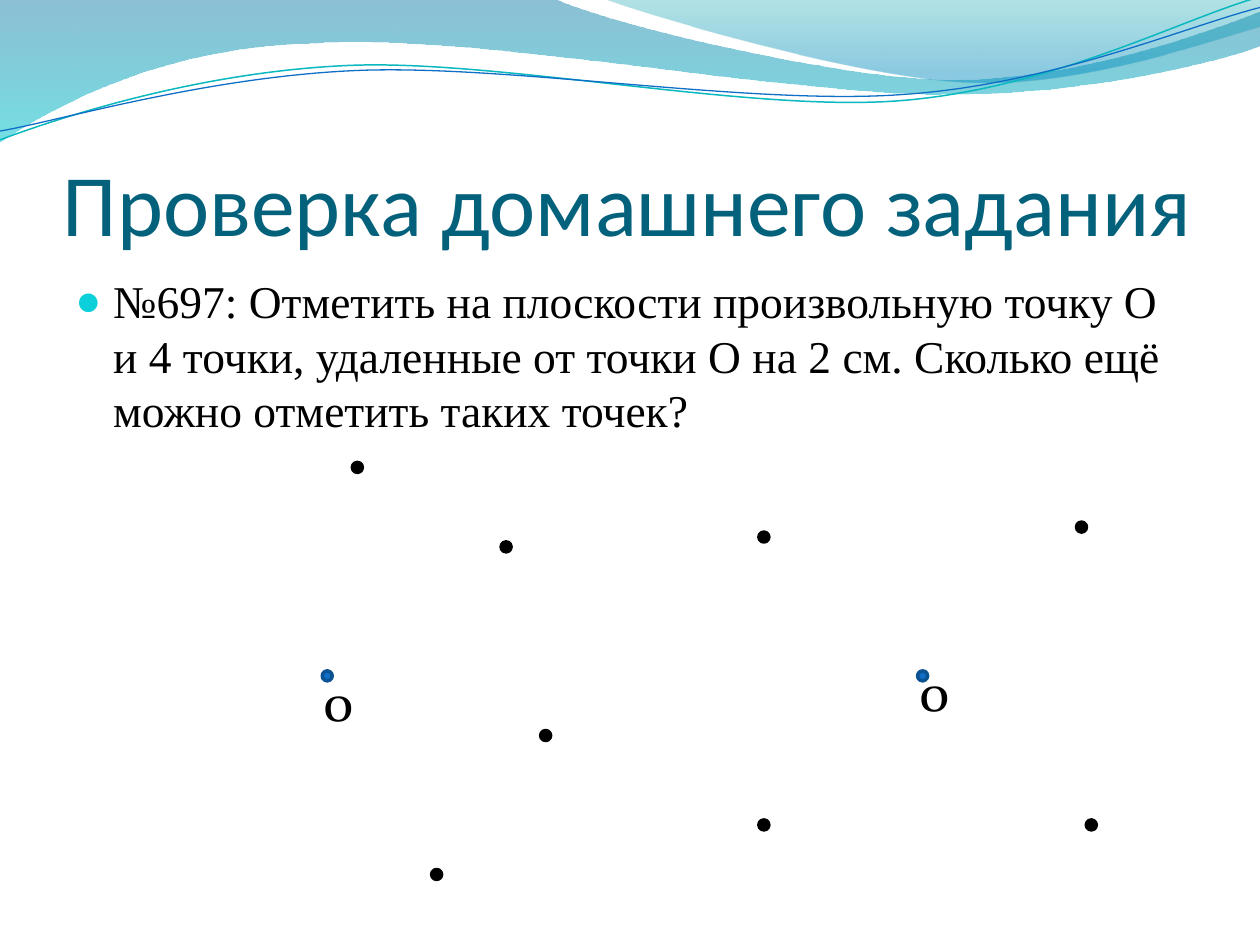
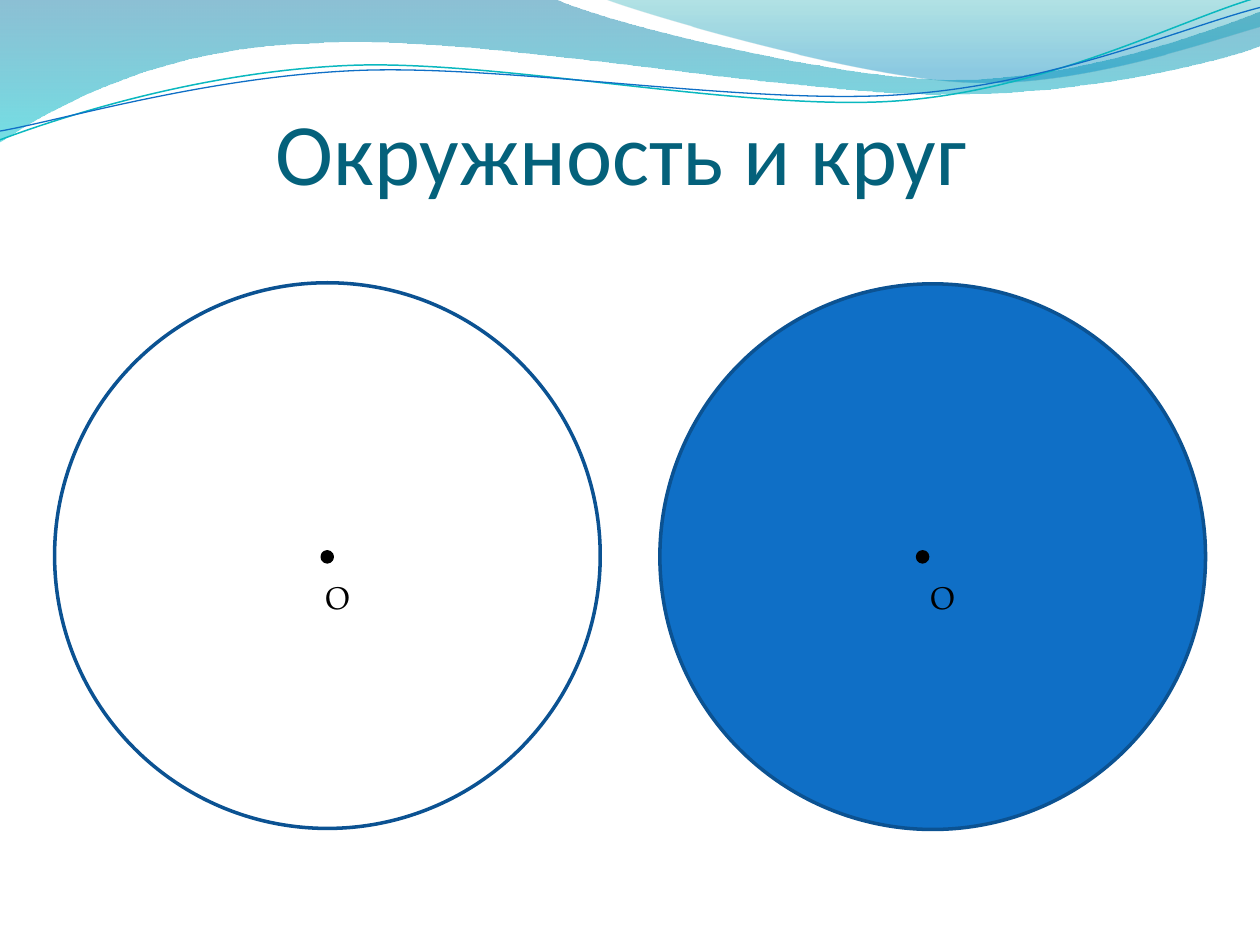
from math import cos, radians, sin

from lxml import etree
from pptx import Presentation
from pptx.dml.color import RGBColor
from pptx.enum.shapes import MSO_SHAPE
from pptx.enum.text import MSO_ANCHOR, PP_ALIGN
from pptx.oxml.ns import qn
from pptx.util import Pt

OVAL = MSO_SHAPE.OVAL
TOP, BOTTOM = MSO_ANCHOR.TOP, MSO_ANCHOR.BOTTOM
LEFT, CENTER = PP_ALIGN.LEFT, PP_ALIGN.CENTER

COLORS = {
    "title": "04617B", "text": "000000", "bullet": "0BD0D9", "paper": "FFFFFF",
    "blue": "0F6FC6", "outline": "0B5292", "teal": "0AB8BF",
    "wave_top": "0074A1", "wave_low": "00C6CF",
    "crest_top": "00A1A9", "crest_low": "008BBF",
}
TITLE_FONT, BODY_FONT, LABEL_FONT = "Calibri", "Times New Roman", "TeX Gyre Pagella"

HOMEWORK = {
    "title": "Проверка домашнего задания",
    "task": "№697: Отметить на плоскости произвольную точку О и 4 точки, "
            "удаленные от точки О на 2 см. Сколько ещё можно отметить таких точек?",
    "centers": [(187, 386.2), (527.2, 386.2)],
    "points": [(204.2, 267.1), (289.2, 312.5), (311.8, 420.3), (249.5, 499.7),
               (436.5, 471.4), (623.6, 471.4), (436.5, 306.9), (618, 301.2)],
    "labels": [(178.6, 389), (518.7, 383.3)],
}
CIRCLES = {
    "title": "Окружность и круг",
    "discs": [(31.2, 161.6, "paper"), (377.1, 162.2, "blue")],
    "centers": [(187, 318.2), (527.2, 318.2)],
    "labels": [(178.6, 326.9), (524.2, 326.9)],
}
DISC, DOT = 311.8, 5.7

BANDS = [
    ((0, 0), [
        [(316.8, -0.7)],
        [(342.7, 12.2), (478.1, 45.4), (545.8, 45.4)],
        [(614.2, 45.4), (689.8, 18.7), (720, 6.5)],
        [(720.7, 25.9)],
        [(707.8, 31.7), (626.4, 54.7), (537.1, 54)],
        [(447.8, 54), (275, 20.2), (185, 24.5)],
        [(92.9, 25.9), (33.1, 59.8), (-0.7, 81.4)],
    ], [("wave_top", 0, 45), ("wave_low", 1, 55)]),
    ((344.9, -0.7), [
        [(366.5, 7.9), (491, 44.6), (553.7, 46.8)],
        [(616.3, 49.7), (691.9, 23), (720, 15.1)],
        [(720, 0)],
    ], [("crest_top", 0, 30), ("crest_low", 0.8, 45)]),
]
STRANDS = [
    ((0, 79.9), [
        [(34.6, 67), (113.8, 41), (199.4, 37.4)],
        [(284.4, 33.8), (427, 64.1), (513.4, 57.6)],
        [(599.8, 51.1), (675.4, 10.8), (718.6, -1.4)],
    ], (359.3, 41.4), "teal", 0.85),
    ((0, 74.9), [
        [(33.8, 69.1), (118.1, 43.9), (203.8, 40.3)],
        [(290.2, 36.7), (429.8, 60.5), (516.2, 54)],
        [(601.9, 48.2), (677.5, 15.1), (720, 4.3)],
    ], (359.6, 42.5), "blue", 0.75),
]
TILT = 2.7


def rgb(name):
    return RGBColor.from_string(COLORS[name])


def turn(point, pivot):
    a = radians(TILT)
    dx, dy = point[0] - pivot[0], point[1] - pivot[1]
    return pivot[0] + dx * cos(a) - dy * sin(a), pivot[1] + dx * sin(a) + dy * cos(a)


def add_outline(s, start, steps, close):
    builder = s.shapes.build_freeform(Pt(start[0]), Pt(start[1]))
    corners = [(Pt(x), Pt(y)) for step in steps for x, y in step]
    builder.add_line_segments(corners, close=close)
    sp = builder.convert_to_shape()
    sp.shadow.inherit = False
    sides = iter(list(sp._element.spPr.iter(qn("a:lnTo"))))
    for step in steps:
        group = [next(sides) for _ in step]
        if len(group) == 3:
            curve = etree.Element(qn("a:cubicBezTo"))
            group[0].addprevious(curve)
            for side in group:
                curve.append(side[0])
                side.getparent().remove(side)
    return sp


def add_waves(s):
    for start, steps, stops in BANDS:
        sp = add_outline(s, start, steps, True)
        sp.line.fill.background()
        sp.fill.gradient()
        sp.fill.gradient_angle = 270
        for stop, (color, position, _) in zip(sp.fill.gradient_stops, stops):
            stop.color.rgb = rgb(color)
            stop.position = position
        tints = list(sp._element.spPr.iter(qn("a:srgbClr")))
        for tint, (_, _, opacity) in zip(tints, stops):
            etree.SubElement(tint, qn("a:alpha"), val=str(opacity * 1000))
    for start, steps, pivot, color, width in STRANDS:
        level = [[turn(point, pivot) for point in step] for step in steps]
        sp = add_outline(s, turn(start, pivot), level, False)
        sp.rotation = 360 - TILT
        sp.fill.background()
        sp.line.color.rgb = rgb(color)
        sp.line.width = Pt(width)


def add_text(s, box, text, font, size, color="text", bold=False,
             align=LEFT, anchor=TOP, insets=(7.2, 3.6, 7.2, 3.6)):
    tf = s.shapes.add_textbox(*map(Pt, box)).text_frame
    tf.word_wrap = True
    tf.vertical_anchor = anchor
    tf.margin_left, tf.margin_top, tf.margin_right, tf.margin_bottom = map(Pt, insets)
    p = tf.paragraphs[0]
    p.alignment = align
    r = p.add_run()
    r.text = text
    r.font.name, r.font.size, r.font.bold = font, Pt(size), bold
    r.font.color.rgb = rgb(color)
    return p


def add_title(s, text, left, top, align=LEFT):
    add_text(s, (left, top, 648, 90), text, TITLE_FONT, 50, "title",
             align=align, anchor=BOTTOM, insets=(0, 3.6, 0, 0))


def add_task(s, text):
    p = add_text(s, (36, 152.6, 648, 95), text, BODY_FONT, 26)
    p.space_before = Pt(5.2)
    pPr = p._p.get_or_add_pPr()
    pPr.set("marL", str(Pt(21.6)))
    pPr.set("indent", str(-Pt(21.6)))
    tint = etree.SubElement(pPr, qn("a:buClr"))
    etree.SubElement(tint, qn("a:srgbClr"), val=COLORS["bullet"])
    etree.SubElement(pPr, qn("a:buSzPct"), val="95000")
    etree.SubElement(pPr, qn("a:buFont"), typeface=BODY_FONT)
    etree.SubElement(pPr, qn("a:buChar"), char="●")


def add_oval(s, left, top, size, fill, line):
    sp = s.shapes.add_shape(OVAL, Pt(left), Pt(top), Pt(size), Pt(size))
    sp.shadow.inherit = False
    sp.fill.solid()
    sp.fill.fore_color.rgb = rgb(fill)
    sp.line.color.rgb = rgb(line)
    sp.line.width = Pt(2)


def add_dots(s, centers, fill="text", line="text"):
    for x, y in centers:
        add_oval(s, x - DOT / 2, y - DOT / 2, DOT, fill, line)


def add_labels(s, corners, size, height, bold=False):
    for left, top in corners:
        add_text(s, (left, top, 20.2, height), "О", LABEL_FONT, size, bold=bold)


def new_slide(prs):
    s = prs.slides.add_slide(prs.slide_layouts[6])
    add_waves(s)
    return s


def main():
    prs = Presentation()
    prs.slide_width, prs.slide_height = Pt(720), Pt(540)

    s = new_slide(prs)
    add_title(s, HOMEWORK["title"], 36, 55.4)
    add_task(s, HOMEWORK["task"])
    add_dots(s, HOMEWORK["centers"], "blue", "outline")
    add_dots(s, HOMEWORK["points"])
    add_labels(s, HOMEWORK["labels"], 20, 31.5, bold=True)

    s = new_slide(prs)
    add_title(s, CIRCLES["title"], 31.2, 25.9, CENTER)
    for left, top, fill in CIRCLES["discs"]:
        add_oval(s, left, top, DISC, fill, "outline")
    add_dots(s, CIRCLES["centers"])
    add_labels(s, CIRCLES["labels"], 18, 29)

    prs.save("out.pptx")


if __name__ == "__main__":
    main()
